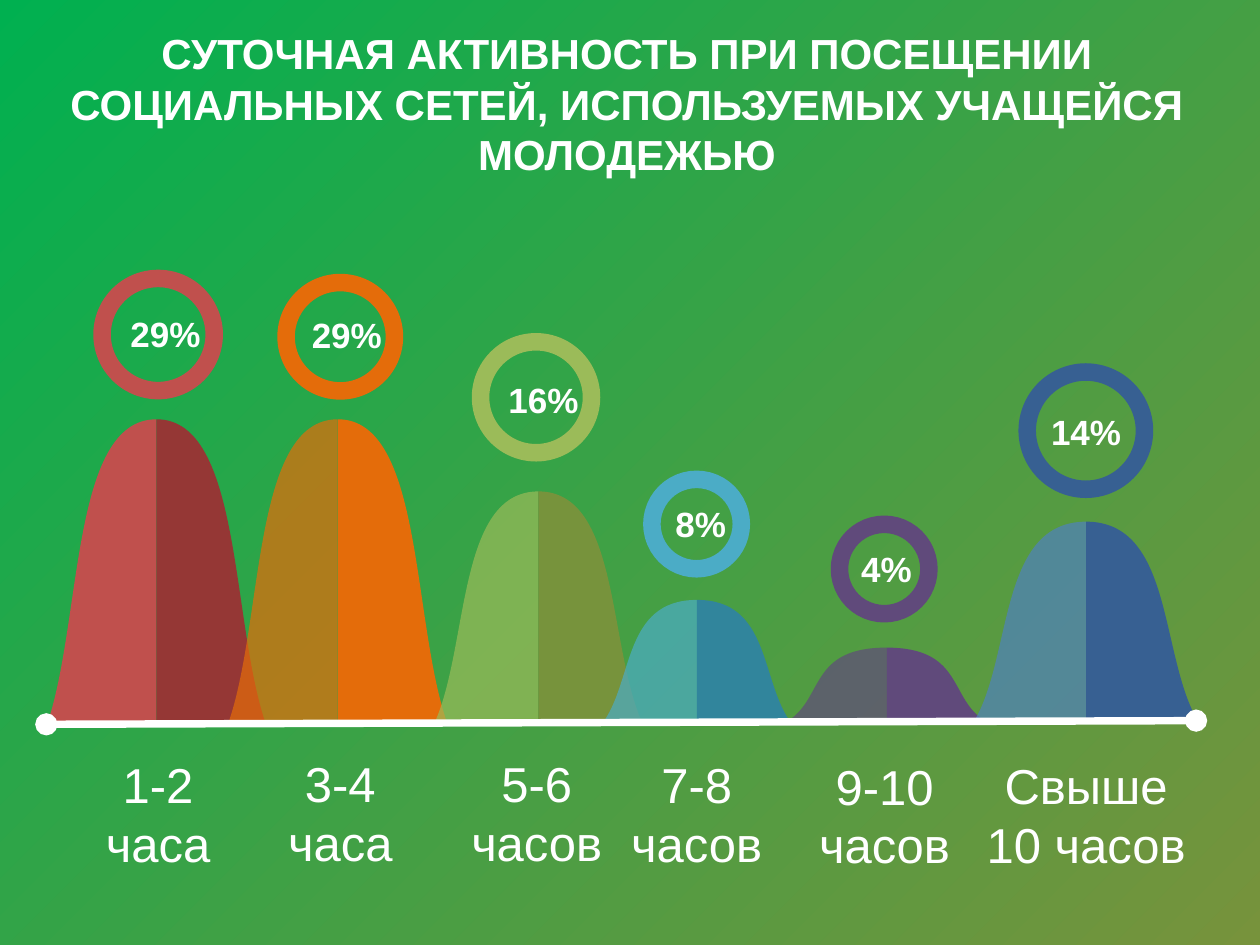
from dataclasses import dataclass

from lxml import etree
from pptx import Presentation
from pptx.dml.color import RGBColor
from pptx.enum.shapes import MSO_CONNECTOR, MSO_SHAPE
from pptx.enum.text import MSO_ANCHOR, MSO_AUTO_SIZE, PP_ALIGN
from pptx.oxml.ns import qn
from pptx.util import Pt

STRAIGHT = MSO_CONNECTOR.STRAIGHT
RECT, OVAL = MSO_SHAPE.RECTANGLE, MSO_SHAPE.OVAL
TOP, MIDDLE = MSO_ANCHOR.TOP, MSO_ANCHOR.MIDDLE
LEFT, CENTER = PP_ALIGN.LEFT, PP_ALIGN.CENTER
FIT_SHAPE = MSO_AUTO_SIZE.SHAPE_TO_FIT_TEXT

FONT = "Arial"
RING_WIDTH = 10
# Slope from summit to foot: (share of half width, share of height from the top)
SLOPE = [(0.785, 0), (0.67, 0.665), (1, 1)]
COLORS = {
    "white": "FFFFFF", "green": "00B050", "olive": "77933C",
    "red": "C0504D", "dark red": "953735", "orange": "E46C0A",
    "lime": "9BBB59", "aqua": "4BACC6", "teal": "31859C",
    "purple": "604A7B", "blue": "4F81BD", "navy": "376092",
}


@dataclass(frozen=True)
class Box:
    left: float
    top: float
    width: float
    height: float

    def emu(self) -> tuple:
        return Pt(self.left), Pt(self.top), Pt(self.width), Pt(self.height)


@dataclass(frozen=True)
class Peak:
    center: float
    half_width: float
    top: float
    base: float
    left_color: str
    right_color: str
    ring_color: str
    ring: Box
    percent: str
    percent_box: Box
    hours: str
    hours_box: Box
    left_alpha: int = 70
    align: PP_ALIGN = LEFT


PEAKS = [
    Peak(89.4, 63, 239.6, 415.4, "red", "dark red", "red",
         Box(58.3, 159.1, 64.1, 64.1), "29%", Box(67.4, 175, 54.7, 31.5),
         "1-2 часа", Box(47.8, 442.1, 85, 45.4), left_alpha=100),
    Peak(193, 62.8, 239.6, 414, "orange", "orange", "orange",
         Box(163.5, 161.5, 61.9, 61.9), "29%", Box(171.1, 175.7, 54.7, 31.5),
         "3-4 часа", Box(151.6, 441.4, 85.7, 45.4)),
    Peak(307.7, 59.2, 280.8, 412.7, "lime", "olive", "lime",
         Box(274.6, 195.3, 63.4, 63.4), "16%", Box(283.4, 212.7, 68.4, 38.9),
         "5-6 часов", Box(255.2, 441.4, 103, 45.4)),
    Peak(398.2, 54, 342.8, 413.3, "aqua", "teal", "aqua",
         Box(372.5, 273.9, 51.1, 51.1), "8%", Box(378.9, 283.7, 43.9, 31.5),
         "7-8 часов", Box(350.6, 442.1, 95, 45.4)),
    Peak(506.5, 54, 370.1, 410.4, "purple", "purple", "purple",
         Box(479.7, 299.6, 51.1, 51.1), "4%", Box(484.6, 309.2, 43.9, 31.5),
         "9-10 часов", Box(451.1, 443, 108.7, 45.4), align=CENTER),
    Peak(620.6, 63, 298.1, 410.5, "blue", "navy", "navy",
         Box(587, 212.6, 67, 67), "14%", Box(593.3, 231.1, 54.7, 31.5),
         "Свыше 10 часов", Box(553.7, 442.8, 133.9, 45.4), align=CENTER),
]


def rgb(name: str) -> RGBColor:
    return RGBColor.from_string(COLORS[name])


def add_text(shapes, text: str, box: Box, *, size: float, bold: bool = False,
             align: PP_ALIGN = CENTER, anchor: MSO_ANCHOR = TOP,
             wrap: bool = True) -> None:
    tf = shapes.add_textbox(*box.emu()).text_frame
    tf.word_wrap = wrap
    if not wrap:
        tf.auto_size = FIT_SHAPE
    tf.vertical_anchor = anchor
    p = tf.paragraphs[0]
    p.alignment = align
    r = p.add_run()
    r.text = text
    r.font.name, r.font.size, r.font.bold = FONT, Pt(size), bold
    r.font.color.rgb = rgb("white")


def add_background(shapes, box: Box) -> None:
    s = shapes.add_shape(RECT, *box.emu())
    s.shadow.inherit = False
    s.line.fill.background()
    s.fill.gradient()
    s.fill.gradient_angle = 315
    for stop, name, position in zip(s.fill.gradient_stops, ("green", "olive"), (0, 1)):
        stop.color.rgb = rgb(name)
        stop.position = position


def add_half(shapes, peak: Peak, side: int, color: str, alpha: int = 100) -> None:
    """Draw the half of a peak to the left (-1) or right (1) of its centre."""
    width, height = Pt(peak.half_width), Pt(peak.base - peak.top)
    center, base = Pt(peak.center), Pt(peak.base)
    builder = shapes.build_freeform(center + side * width, base)
    builder.add_line_segments([(center, base), (center, base - height)], close=True)
    s = builder.convert_to_shape()

    outline = next(s._element.iter(qn("a:path")))
    curve = etree.Element(qn("a:cubicBezTo"))
    for x, y in SLOPE:
        local_x = x if side > 0 else 1 - x
        etree.SubElement(curve, qn("a:pt"), x=str(round(local_x * width)),
                         y=str(round(y * height)))
    outline.find(qn("a:close")).addprevious(curve)

    s.shadow.inherit = False
    s.line.fill.background()
    s.fill.solid()
    s.fill.fore_color.rgb = rgb(color)
    if alpha < 100:
        clr = s._element.spPr.find(qn("a:solidFill")).find(qn("a:srgbClr"))
        etree.SubElement(clr, qn("a:alpha"), val=str(alpha * 1000))


def add_ring(shapes, box: Box, color: str) -> None:
    s = shapes.add_shape(OVAL, *box.emu())
    s.shadow.inherit = False
    s.fill.background()
    s.line.color.rgb = rgb(color)
    s.line.width = Pt(RING_WIDTH)


def add_peak(shapes, peak: Peak) -> None:
    hill = shapes.add_group_shape().shapes
    add_half(hill, peak, -1, peak.left_color, peak.left_alpha)
    add_half(hill, peak, 1, peak.right_color)
    badge = shapes.add_group_shape().shapes
    add_ring(badge, peak.ring, peak.ring_color)
    add_text(badge, peak.percent, peak.percent_box, size=20, bold=True,
             align=peak.align, wrap=False)


def add_axis(shapes, x1: float, y1: float, x2: float, y2: float) -> None:
    s = shapes.add_connector(STRAIGHT, Pt(x1), Pt(y1), Pt(x2), Pt(y2))
    s.line.color.rgb = rgb("white")
    s.line.width = Pt(4.25)
    ln = s.line._get_or_add_ln()
    for end in ("a:headEnd", "a:tailEnd"):
        etree.SubElement(ln, qn(end), type="oval")
    etree.SubElement(s._element.spPr, qn("a:effectLst"))


def main() -> None:
    prs = Presentation()
    prs.slide_width, prs.slide_height = Pt(720), Pt(540)
    shapes = prs.slides.add_slide(prs.slide_layouts[6]).shapes

    add_background(shapes, Box(-1, -2, 721, 542))
    for peak in PEAKS:
        add_peak(shapes, peak)
    add_axis(shapes, 26.5, 413.9, 683.5, 411.8)
    for peak in PEAKS:
        add_text(shapes, peak.hours, peak.hours_box, size=28, anchor=MIDDLE)
    add_text(shapes, "СУТОЧНАЯ АКТИВНОСТЬ ПРИ ПОСЕЩЕНИИ СОЦИАЛЬНЫХ СЕТЕЙ, "
             "ИСПОЛЬЗУЕМЫХ УЧАЩЕЙСЯ МОЛОДЕЖЬЮ",
             Box(4, 12.4, 708.5, 90), size=24, bold=True)
    prs.save("out.pptx")


if __name__ == "__main__":
    main()
